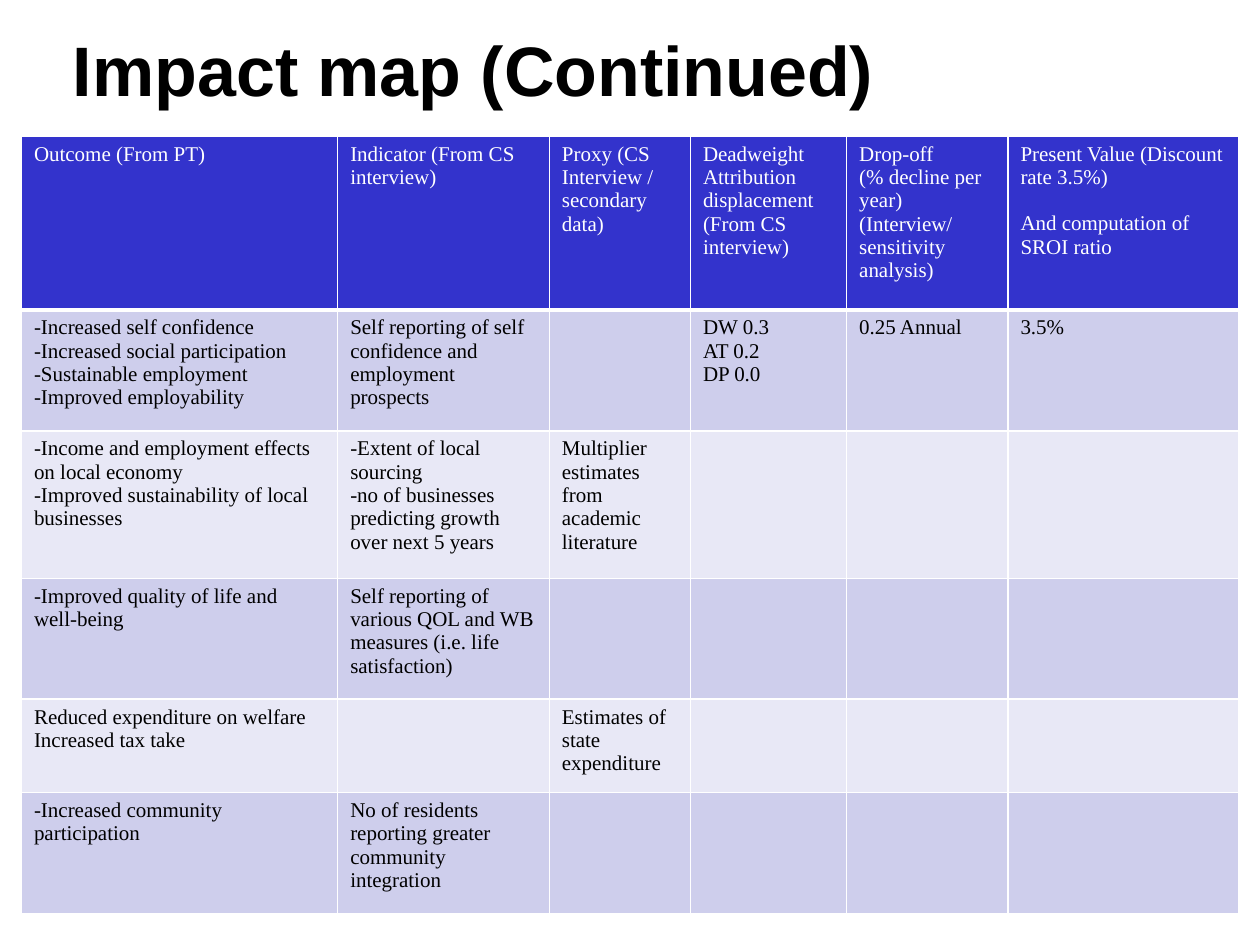
from lxml.etree import SubElement
from pptx import Presentation
from pptx.dml.color import RGBColor
from pptx.enum.text import MSO_ANCHOR, PP_ALIGN
from pptx.oxml.ns import qn
from pptx.util import Inches, Pt

COLUMN_WIDTHS = [2.51, 1.68, 1.12, 1.24, 1.28, 1.83]
ROW_HEIGHTS = [1.38, 0.96, 1.17, 0.96, 0.74, 0.96]
# One list of columns per row; each line of a cell is a paragraph.
IMPACT_ROWS = [
    ["Outcome (From PT)",
     "Indicator (From CS interview)",
     "Proxy (CS Interview / secondary data)",
     "Deadweight Attribution displacement\n(From CS interview)",
     "Drop-off\n(% decline per year)\n(Interview/sensitivity analysis)",
     "Present Value (Discount rate 3.5%)\nAnd computation of SROI ratio"],
    ["-Increased self confidence\n-Increased social participation\n"
     "-Sustainable employment\n-Improved employability",
     "Self reporting of self confidence and employment prospects",
     "",
     "DW 0.3\nAT 0.2\nDP 0.0",
     "0.25 Annual",
     "3.5%"],
    ["-Income and employment effects on local economy\n"
     "-Improved sustainability of local businesses",
     "-Extent of local sourcing\n"
     "-no of businesses predicting growth over next 5 years",
     "Multiplier estimates from academic literature",
     "", "", ""],
    ["-Improved quality of life and well-being",
     "Self reporting of various QOL and WB measures (i.e. life satisfaction)",
     "", "", "", ""],
    ["Reduced expenditure on welfare\nIncreased tax take",
     "",
     "Estimates of state expenditure",
     "", "", ""],
    ["-Increased community participation",
     "No of residents reporting greater community integration",
     "", "", "", ""],
]


def color(hex_value):
    return RGBColor.from_string(hex_value)


class SlideBuilder:
    title_font = "Arial"
    body_font = "Times New Roman"
    text_color = "000000"
    header_text = border_color = "FFFFFF"
    header_fill = "3333CC"
    band_fills = ["E8E8F6", "CECEEC"]

    def __init__(self, slide):
        self.slide = slide

    def style(self, paragraph, name, size, hex_value, bold=False):
        font = paragraph.font
        font.name, font.size, font.bold = name, Pt(size), bold
        font.color.rgb = color(hex_value)

    def title(self, text, left, top, width, height):
        shape = self.slide.shapes.add_textbox(
            Inches(left), Inches(top), Inches(width), Inches(height))
        frame = shape.text_frame
        frame.word_wrap = True
        frame.vertical_anchor = MSO_ANCHOR.MIDDLE
        paragraph = frame.paragraphs[0]
        paragraph.text = text
        paragraph.alignment = PP_ALIGN.CENTER
        self.style(paragraph, self.title_font, 40, self.text_color, bold=True)

    def table(self, rows, left, top, widths, heights):
        table = self.slide.shapes.add_table(
            len(rows), len(widths), Inches(left), Inches(top),
            Inches(sum(widths)), Inches(sum(heights))).table
        table.first_row = table.horz_banding = False
        for column, width in zip(table.columns, widths):
            column.width = Inches(width)
        for row_index, (texts, height) in enumerate(zip(rows, heights)):
            table.rows[row_index].height = Inches(height)
            for column_index, text in enumerate(texts):
                self.cell(table.cell(row_index, column_index), text, row_index)
        return table

    def cell(self, cell, text, row_index):
        header = row_index == 0
        self.borders(cell, bottom=3 if header else 1)
        cell.fill.solid()
        cell.fill.fore_color.rgb = color(
            self.header_fill if header else self.band_fills[row_index % 2])
        cell.text = text
        for paragraph in cell.text_frame.paragraphs:
            self.style(paragraph, self.body_font, 12,
                       self.header_text if header else self.text_color)

    def borders(self, cell, bottom):
        """Draw all four cell edges; call before the cell is filled."""
        properties = cell._tc.get_or_add_tcPr()
        for edge, points in (("L", 1), ("R", 1), ("T", 1), ("B", bottom)):
            line = SubElement(properties, qn(f"a:ln{edge}"), w=str(Pt(points)))
            fill = SubElement(line, qn("a:solidFill"))
            SubElement(fill, qn("a:srgbClr"), val=self.border_color)


def main():
    presentation = Presentation()
    presentation.slide_width = Inches(10)
    presentation.slide_height = Inches(7.5)
    builder = SlideBuilder(
        presentation.slides.add_slide(presentation.slide_layouts[6]))
    builder.title("Impact map (Continued)", 0.17, 0.17, 7.17, 0.75)
    table = builder.table(IMPACT_ROWS, 0.17, 1.08, COLUMN_WIDTHS, ROW_HEIGHTS)
    ratio_paragraph = table.cell(0, 5).text_frame.paragraphs[1]
    ratio_paragraph.space_before = Pt(13.3)
    presentation.save("out.pptx")


if __name__ == "__main__":
    main()
